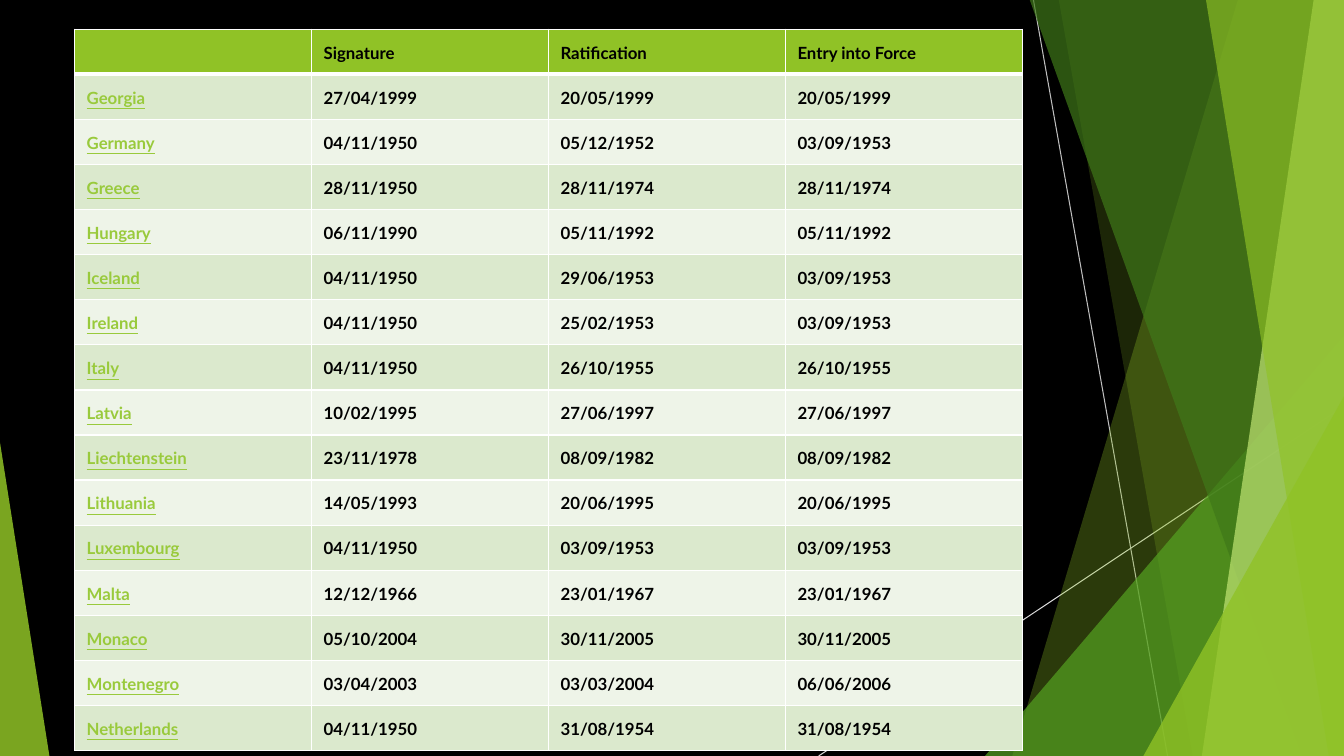
from lxml import etree
from pptx import Presentation
from pptx.dml.color import RGBColor
from pptx.enum.shapes import MSO_CONNECTOR, MSO_SHAPE
from pptx.enum.text import MSO_ANCHOR
from pptx.oxml.ns import qn
from pptx.util import Inches, Pt

BLACK = RGBColor(0x00, 0x00, 0x00)
WHITE = RGBColor(0xFF, 0xFF, 0xFF)
GREY = RGBColor(0xBF, 0xBF, 0xBF)
LIGHT_GREY = RGBColor(0xD9, 0xD9, 0xD9)
LIME = RGBColor(0x90, 0xC2, 0x26)
GREEN = RGBColor(0x54, 0xA0, 0x21)
DARK_GREEN = RGBColor(0x3F, 0x78, 0x19)
PALE_LIME = RGBColor(0xC0, 0xE4, 0x74)
LINK_GREEN = RGBColor(0x99, 0xCA, 0x3C)
BAND_DARK = RGBColor(0xDB, 0xE9, 0xCD)
BAND_LIGHT = RGBColor(0xEE, 0xF4, 0xE8)

HEADINGS = ("", "Signature", "Ratification", "Entry into Force")
STATES = [
    ("Georgia", "27/04/1999", "20/05/1999", "20/05/1999"),
    ("Germany", "04/11/1950", "05/12/1952", "03/09/1953"),
    ("Greece", "28/11/1950", "28/11/1974", "28/11/1974"),
    ("Hungary", "06/11/1990", "05/11/1992", "05/11/1992"),
    ("Iceland", "04/11/1950", "29/06/1953", "03/09/1953"),
    ("Ireland", "04/11/1950", "25/02/1953", "03/09/1953"),
    ("Italy", "04/11/1950", "26/10/1955", "26/10/1955"),
    ("Latvia", "10/02/1995", "27/06/1997", "27/06/1997"),
    ("Liechtenstein", "23/11/1978", "08/09/1982", "08/09/1982"),
    ("Lithuania", "14/05/1993", "20/06/1995", "20/06/1995"),
    ("Luxembourg", "04/11/1950", "03/09/1953", "03/09/1953"),
    ("Malta", "12/12/1966", "23/01/1967", "23/01/1967"),
    ("Monaco", "05/10/2004", "30/11/2005", "30/11/2005"),
    ("Montenegro", "03/04/2003", "03/03/2004", "06/06/2006"),
    ("Netherlands", "04/11/1950", "31/08/1954", "31/08/1954"),
]


def paint(shape, color, opacity):
    """Give a shape a see-through fill (opacity in percent), no line and no shadow."""
    shape.shadow.inherit = False
    shape.line.fill.background()
    shape.fill.solid()
    shape.fill.fore_color.rgb = color
    srgb = shape.fill._xPr.find(qn("a:solidFill")).find(qn("a:srgbClr"))
    etree.SubElement(srgb, qn("a:alpha"), val=str(opacity * 1000))


def write_text(cell, text, color=BLACK, underline=False):
    cell.vertical_anchor = MSO_ANCHOR.MIDDLE
    cell.margin_left = cell.margin_right = Inches(0.12)
    cell.margin_top = cell.margin_bottom = Inches(0.11)
    para = cell.text_frame.paragraphs[0]
    para.line_spacing = 1.07
    span = para.add_run()
    span.text = text
    span.font.name = "Lato"
    span.font.size = Pt(12)
    span.font.bold = True
    span.font.underline = underline
    span.font.color.rgb = color


deck = Presentation()
deck.slide_width = Inches(13.33)
deck.slide_height = Inches(7.5)
page = deck.slides.add_slide(deck.slide_layouts[6])
page.background.fill.solid()
page.background.fill.fore_color.rgb = BLACK

# Thin diagonal lines
for x1, y1, x2, y2, color in [
    (10.25, 0, 11.58, 7.5, GREY),
    (13.33, 4.03, 8.12, 7.5, LIGHT_GREY),
]:
    line = page.shapes.add_connector(
        MSO_CONNECTOR.STRAIGHT, Inches(x1), Inches(y1), Inches(x2), Inches(y2))
    line.line.color.rgb = color
    line.line.width = Pt(0.75)
    etree.SubElement(line._element.spPr, qn("a:effectLst"))

# Facets: slanted bands (top x, bottom x) reach the right edge; triangles have a box and a tip
for kind, place, color, opacity in [
    ("band", (12.28, 10.04), LIME, 30),
    ("band", (10.5, 11.83), LIME, 20),
    ("triangle", (9.77, 3.33, 3.56, 4.17, 1), GREEN, 72),
    ("band", (10.21, 12.91), DARK_GREEN, 70),
    ("band", (13.03, 11.92), PALE_LIME, 70),
    ("band", (11.96, 13.18), LIME, 65),
    ("triangle", (11.34, 3.93, 1.99, 3.57, 1), LIME, 80),
    ("triangle", (0, 4.39, 0.49, 3.11, 0), LIME, 85),
]:
    if kind == "band":
        top_x, bottom_x = place
        outline = page.shapes.build_freeform(Inches(top_x), Inches(-0.01))
        outline.add_line_segments([
            (Inches(13.33), Inches(-0.01)),
            (Inches(13.33), Inches(7.5)),
            (Inches(bottom_x), Inches(7.5)),
        ], close=True)
        facet = outline.convert_to_shape()
    else:
        *frame, tip = place
        facet = page.shapes.add_shape(
            MSO_SHAPE.ISOSCELES_TRIANGLE, *[Inches(length) for length in frame])
        facet.adjustments[0] = tip
    paint(facet, color, opacity)

# Table of dates
rows = [HEADINGS] + STATES
table = page.shapes.add_table(
    len(rows), len(HEADINGS), Inches(0.74), Inches(0.29), Inches(9.4), Inches(7.16)).table
table.horz_banding = False

for row_index, row in enumerate(rows):
    if row_index == 0:
        row_fill = LIME
    else:
        row_fill = BAND_DARK if row_index % 2 else BAND_LIGHT
    for column_index, text in enumerate(row):
        cell = table.cell(row_index, column_index)
        properties = cell._tc.get_or_add_tcPr()
        for side in ("L", "R", "T", "B"):
            thick = (row_index, side) in [(0, "B"), (1, "T")]
            border = etree.SubElement(
                properties, qn(f"a:ln{side}"), w=str(Pt(3 if thick else 1)))
            border_fill = etree.SubElement(border, qn("a:solidFill"))
            etree.SubElement(border_fill, qn("a:srgbClr"), val=str(WHITE))
        cell.fill.solid()
        cell.fill.fore_color.rgb = row_fill
        is_state = row_index > 0 and column_index == 0
        if text:
            write_text(cell, text, color=LINK_GREEN if is_state else BLACK, underline=is_state)

deck.save("out.pptx")
